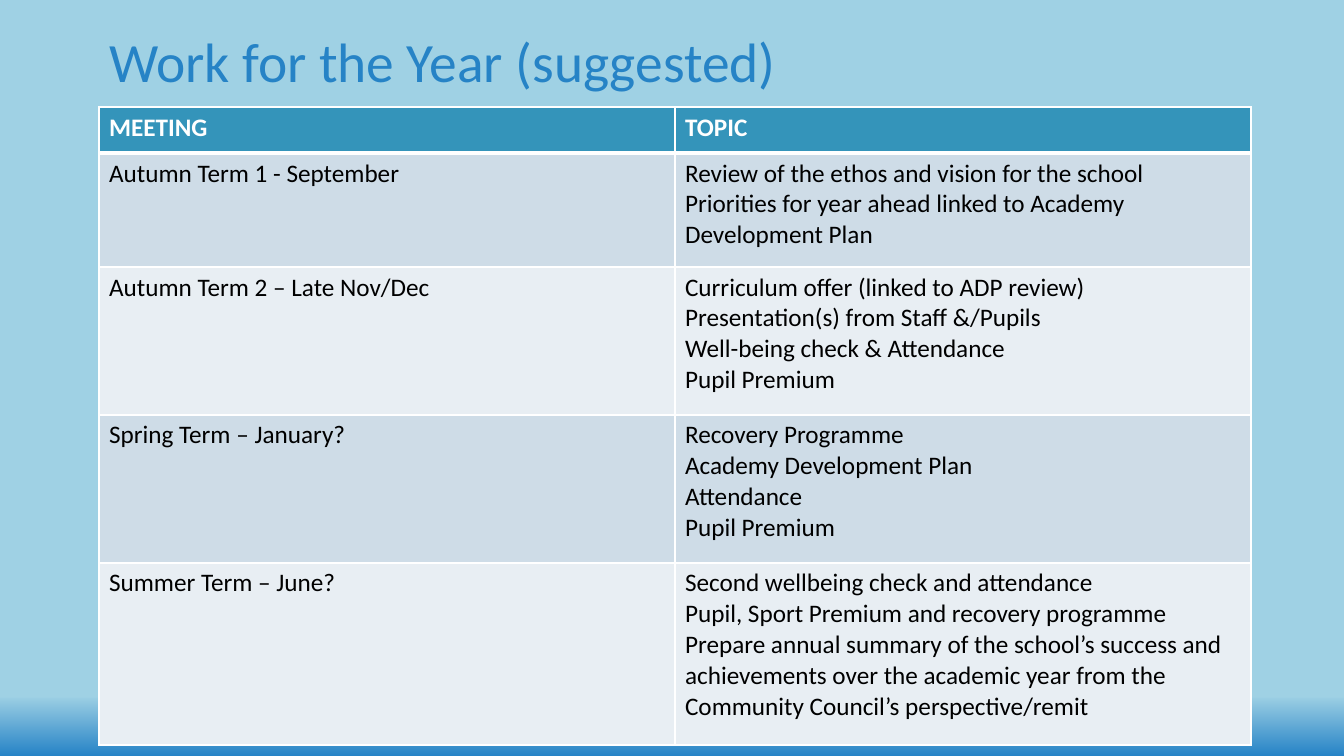
from dataclasses import dataclass

from lxml import etree
from pptx import Presentation
from pptx import util as u
from pptx.dml.color import RGBColor
from pptx.enum import text
from pptx.oxml import ns


@dataclass(frozen=True)
class Theme:
    """Colours, font and type sizes of the slide."""
    font: str = "Calibri"
    title: str = "2683C6"
    sky: str = "9FD1E4"
    header: str = "3494BA"
    bands: tuple = ("CEDCE7", "E8EEF3")
    white: str = "FFFFFF"
    black: str = "000000"
    title_size: float = 39.6
    body_size: float = 18


THEME = Theme()
EMU_PER_PX = u.Inches(1) / 100.8
TITLE = "Work for the Year (suggested)"
HEADINGS = ("MEETING", "TOPIC")
MEETINGS = (
    ("Autumn Term 1 - September", (
        "Review of the ethos and vision for the school",
        "Priorities for year ahead linked to Academy Development Plan")),
    ("Autumn Term 2 – Late Nov/Dec", (
        "Curriculum offer (linked to ADP review)",
        "Presentation(s) from Staff &/Pupils",
        "Well-being check & Attendance",
        "Pupil Premium")),
    ("Spring Term – January?", (
        "Recovery Programme",
        "Academy Development Plan",
        "Attendance",
        "Pupil Premium")),
    ("Summer Term – June?", (
        "Second wellbeing check and attendance",
        "Pupil, Sport Premium and recovery programme",
        "Prepare annual summary of the school’s success and achievements over "
        "the academic year from the Community Council’s perspective/remit")),
)
ROW_HEIGHTS = (46, 114, 148, 148, 182)
COLUMN_WIDTH = 576


def px(n):
    """Turn pixels into EMU."""
    return u.Emu(round(n * EMU_PER_PX))


def rgb(code):
    """Turn a hex code into a colour."""
    return RGBColor.from_string(code)


def write(tf, lines, size=THEME.body_size, color=THEME.black, bold=False, spacing=None):
    """Write each line as a left-aligned paragraph."""
    for i, line in enumerate(lines):
        p = tf.add_paragraph() if i else tf.paragraphs[0]
        p.alignment = text.PP_ALIGN.LEFT
        p.line_spacing = spacing
        r = p.add_run()
        r.text = line
        r.font.name = THEME.font
        r.font.size = u.Pt(size)
        r.font.bold = bold
        r.font.color.rgb = rgb(color)


def paint_background(slide):
    """Fill the background with sky that deepens at the foot."""
    fill = slide.background.fill
    fill.gradient()
    fill.gradient_angle = 270
    for stop, position, color in zip(fill.gradient_stops, (0.92, 1), (THEME.sky, THEME.title)):
        stop.position = position
        stop.color.rgb = rgb(color)


def add_title(slide, title):
    """Place and format the title."""
    sp = slide.shapes.title
    sp.left, sp.top, sp.width, sp.height = map(px, (99, 40, 1152, 49))
    tf = sp.text_frame
    tf.word_wrap = True
    tf.auto_size = text.MSO_AUTO_SIZE.NONE
    tf.vertical_anchor = text.MSO_ANCHOR.MIDDLE
    write(tf, [title], size=THEME.title_size, color=THEME.title, spacing=0.9)


def set_borders(cell, **widths):
    """Draw white cell borders with widths in points by side."""
    tc_pr = cell._tc.get_or_add_tcPr()
    for side, width in widths.items():
        ln = etree.SubElement(tc_pr, ns.qn(f"a:ln{side}"), w=str(u.Pt(width)))
        fill = etree.SubElement(ln, ns.qn("a:solidFill"))
        etree.SubElement(fill, ns.qn("a:srgbClr"), val=THEME.white)


def fill_cell(cell, lines, fill, top=1, bottom=1, **fmt):
    """Give a cell its borders, fill and text."""
    set_borders(cell, L=1, R=1, T=top, B=bottom)
    cell.fill.solid()
    cell.fill.fore_color.rgb = rgb(fill)
    write(cell.text_frame, lines, **fmt)


def add_schedule(slide):
    """Add the table of meetings and topics."""
    table = slide.shapes.add_table(
        len(ROW_HEIGHTS), len(HEADINGS), px(99), px(107),
        px(COLUMN_WIDTH * len(HEADINGS)), px(sum(ROW_HEIGHTS))).table
    for column in table.columns:
        column.width = px(COLUMN_WIDTH)
    for row, height in zip(table.rows, ROW_HEIGHTS):
        row.height = px(height)
    for col, heading in enumerate(HEADINGS):
        fill_cell(table.cell(0, col), [heading], THEME.header, bottom=3,
                  color=THEME.white, bold=True)
    for row, (meeting, topics) in enumerate(MEETINGS, 1):
        band = THEME.bands[(row - 1) % 2]
        for col, lines in enumerate(([meeting], topics)):
            fill_cell(table.cell(row, col), lines, band, top=3 if row == 1 else 1)


def main():
    """Build and save the slide."""
    prs = Presentation()
    prs.slide_width, prs.slide_height = px(1344), px(756)
    slide = prs.slides.add_slide(prs.slide_layouts.get_by_name("Title Only"))
    paint_background(slide)
    add_title(slide, TITLE)
    add_schedule(slide)
    prs.save("out.pptx")


if __name__ == "__main__":
    main()
